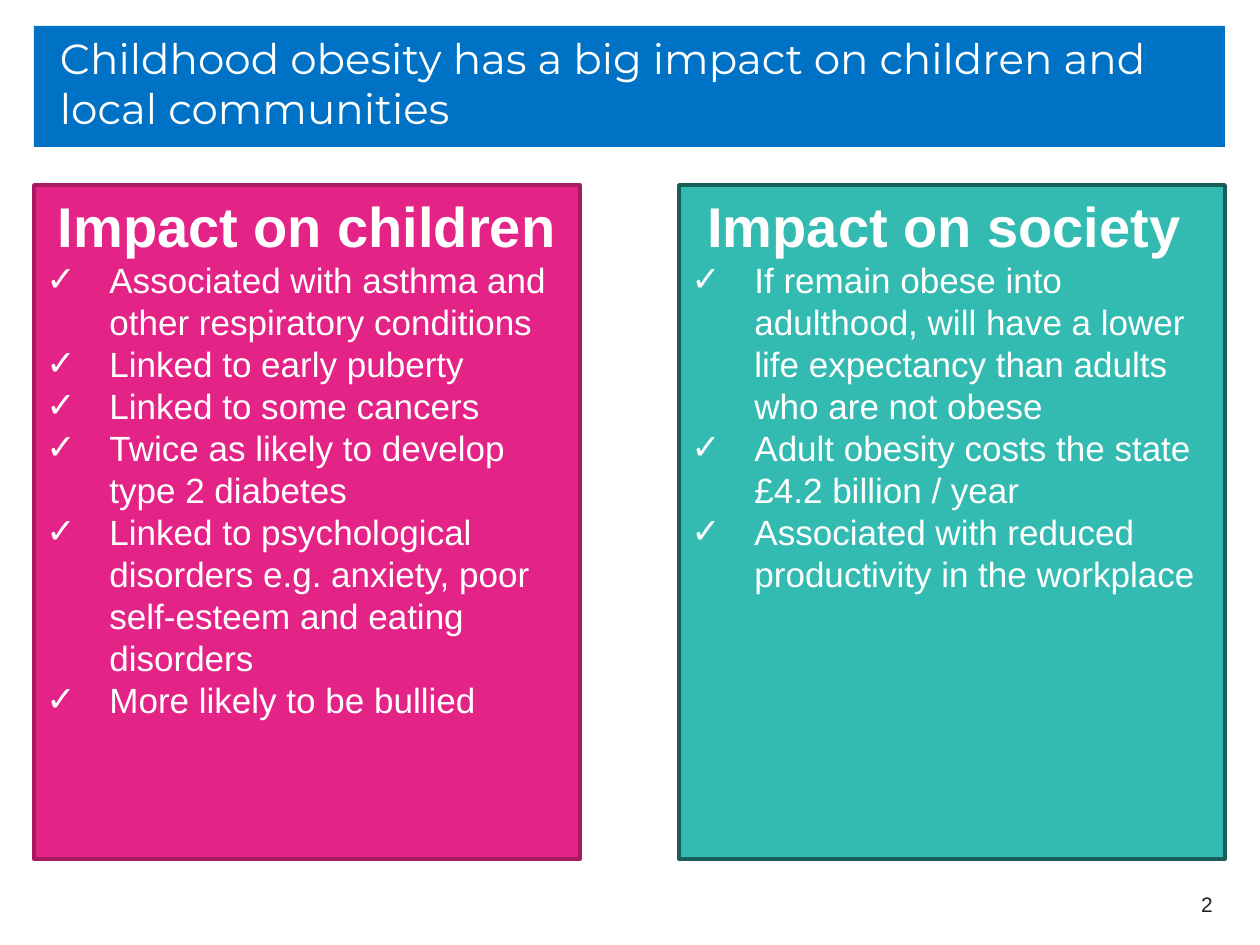
from dataclasses import dataclass

from lxml import etree
from pptx import Presentation
from pptx.dml.color import RGBColor
from pptx.enum.shapes import MSO_SHAPE
from pptx.enum.text import MSO_ANCHOR, PP_ALIGN
from pptx.oxml.ns import qn
from pptx.util import Emu, Pt

RECT = MSO_SHAPE.RECTANGLE
TOP, MIDDLE = MSO_ANCHOR.TOP, MSO_ANCHOR.MIDDLE
LEFT, CENTER, RIGHT = PP_ALIGN.LEFT, PP_ALIGN.CENTER, PP_ALIGN.RIGHT
PX_PER_INCH = 126
COLORS = {
    "white": "FFFFFF",
    "number": "202020",
    "banner": "0072C6",
    "pink": "E32486",
    "pink_line": "A81B63",
    "teal": "33BBB1",
    "teal_line": "1A5E59",
}
MARGIN, CONTENT_W = 34, 1191
PANEL_TOP, PANEL_W, PANEL_H = 185, 546, 674
INDENT = 63


@dataclass
class Panel:
    x: int
    color: str
    heading: str
    bullets: list[str]


PANELS = [
    Panel(MARGIN, "pink", "Impact on children", [
        "Associated with asthma and other respiratory conditions",
        "Linked to early puberty",
        "Linked to some cancers",
        "Twice as likely to develop type 2 diabetes",
        "Linked to psychological disorders e.g. anxiety, poor self-esteem and eating disorders",
        "More likely to be bullied",
    ]),
    Panel(MARGIN + CONTENT_W - PANEL_W, "teal", "Impact on society ", [
        "If remain obese into adulthood, will have a lower life expectancy than adults who are not obese",
        "Adult obesity costs the state £4.2 billion / year",
        "Associated with reduced productivity in the workplace",
    ]),
]


def px(n: int) -> Emu:
    return Emu(round(n * 914400 / PX_PER_INCH))


def rgb(name: str) -> RGBColor:
    return RGBColor.from_string(COLORS[name])


def add_box(s, x: int, y: int, w: int, h: int, fill: str, line: str | None = None):
    sp = s.shapes.add_shape(RECT, px(x), px(y), px(w), px(h))
    sp.shadow.inherit = False
    sp.fill.solid()
    sp.fill.fore_color.rgb = rgb(fill)
    if line:
        sp.line.color.rgb = rgb(line)
        sp.line.width = Pt(2)
    else:
        sp.line.fill.background()
    return sp


def set_text(p, text: str, size: int, align, color: str = "white",
             font: str = "Arial", bold: bool = False) -> None:
    p.text = text
    p.alignment = align
    for r in p.runs:
        r.font.name = font
        r.font.size = Pt(size)
        r.font.bold = bold
        r.font.color.rgb = rgb(color)


def add_check(p) -> None:
    pPr = p._p.get_or_add_pPr()
    pPr.set("marL", str(px(INDENT)))
    pPr.set("indent", str(-px(INDENT)))
    etree.SubElement(pPr, qn("a:buFont"), typeface="Arial")
    etree.SubElement(pPr, qn("a:buChar"), char="✓")


def add_title(s, text: str) -> None:
    tf = add_box(s, MARGIN, 26, CONTENT_W, 121, "banner").text_frame
    tf.word_wrap = True
    tf.vertical_anchor = MIDDLE
    tf.margin_left = px(26)
    tf.margin_bottom = px(14)
    set_text(tf.paragraphs[0], text, 24, LEFT, font="Montserrat")


def add_panel(s, panel: Panel) -> None:
    sp = add_box(s, panel.x, PANEL_TOP, PANEL_W, PANEL_H, panel.color, f"{panel.color}_line")
    tf = sp.text_frame
    tf.word_wrap = True
    tf.vertical_anchor = TOP
    set_text(tf.paragraphs[0], panel.heading, 32, CENTER, bold=True)
    for bullet in panel.bullets:
        p = tf.add_paragraph()
        set_text(p, bullet, 20, LEFT)
        add_check(p)


def add_number(s, text: str) -> None:
    tf = s.shapes.add_textbox(px(931), px(879), px(294), px(50)).text_frame
    tf.word_wrap = True
    tf.vertical_anchor = MIDDLE
    set_text(tf.paragraphs[0], text, 12, RIGHT, color="number")


def main() -> None:
    prs = Presentation()
    prs.slide_width, prs.slide_height = px(1260), px(945)
    s = prs.slides.add_slide(prs.slide_layouts[6])
    add_title(s, "Childhood obesity has a big impact on children and local communities")
    add_number(s, "2")
    for panel in PANELS:
        add_panel(s, panel)
    prs.save("out.pptx")


if __name__ == "__main__":
    main()
